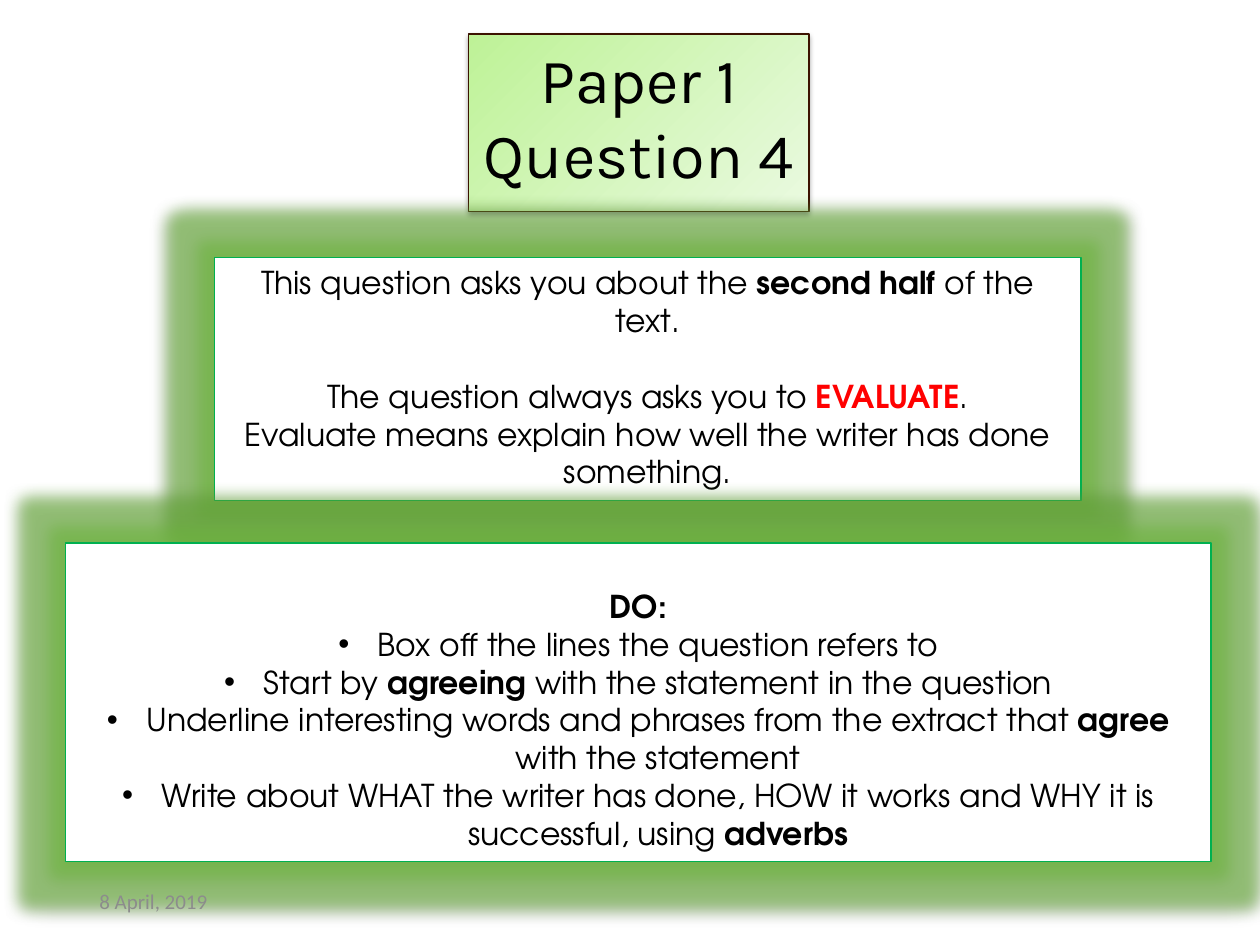
from lxml import etree
from pptx import Presentation
from pptx import util as u
from pptx.dml import color
from pptx.enum import shapes, text
from pptx.oxml import ns

BODY_FONT = "TeX Gyre Adventor"
LINE_HEIGHT = 21.6  # one line of 18 pt body text


def rgb(value):
    return color.RGBColor.from_string(value)


def add_span(para, words, font=BODY_FONT, size=18, hue="000000", bold=False):
    span = para.add_run()
    span.text = words
    span.font.name = font
    span.font.size = u.Pt(size)
    span.font.bold = bold
    span.font.color.rgb = rgb(hue)


def add_para(frame, spans, align=text.PP_ALIGN.CENTER, before=0, bullet=False, **style):
    """Add one paragraph; each span is a string or a (string, format) pair."""
    first = frame.paragraphs[0]
    para = frame.add_paragraph() if first.runs else first
    para.alignment = align
    if before:
        para.space_before = u.Pt(before)
    if bullet:
        props = para._p.get_or_add_pPr()
        props.set("marL", str(u.Pt(22.5)))
        props.set("indent", str(-u.Pt(22.5)))
        etree.SubElement(props, ns.qn("a:buFont")).set("typeface", "Arial")
        etree.SubElement(props, ns.qn("a:buChar")).set("char", "•")
    for span in spans:
        words, extra = (span, {}) if isinstance(span, str) else span
        add_span(para, words, **{**style, **extra})


def add_effect(shape, tag, hue, alpha, **attributes):
    effects = shape.element.spPr.find(ns.qn("a:effectLst"))
    effect = etree.SubElement(effects, ns.qn(tag))
    for name, value in attributes.items():
        effect.set(name, str(value))
    tint = etree.SubElement(effect, ns.qn("a:srgbClr"), val=hue)
    etree.SubElement(tint, ns.qn("a:alpha"), val=str(alpha * 1000))


def add_panel(page, left, top, width, height, line, gradient=None, glow=None, inset=3.6):
    """Add a bordered, shadowed rectangle and return its text frame."""
    panel = page.shapes.add_shape(
        shapes.MSO_SHAPE.RECTANGLE, *map(u.Pt, (left, top, width, height)))
    if gradient:
        panel.fill.gradient()
        panel.fill.gradient_angle = 315
        for stop, hue in zip(panel.fill.gradient_stops, gradient):
            stop.color.rgb = rgb(hue)
    else:
        panel.fill.solid()
        panel.fill.fore_color.rgb = rgb("FFFFFF")
    panel.line.color.rgb = rgb(line)
    panel.line.width = u.Pt(0.75)
    panel.shadow.inherit = False
    if glow:
        add_effect(panel, "a:glow", glow, 60, rad=u.Pt(18))
    add_effect(panel, "a:outerShdw", "000000", 38, blurRad=u.Pt(3.1),
               dist=u.Pt(1.6), dir=5400000, rotWithShape=0)
    frame = panel.text_frame
    frame.word_wrap = True
    frame.vertical_anchor = text.MSO_ANCHOR.TOP
    frame.margin_top = u.Pt(inset)
    return frame


def add_date(page, words):
    box = page.shapes.add_textbox(u.Pt(49.7), u.Pt(500.4), u.Pt(162), u.Pt(28.8))
    box.text_frame.word_wrap = True
    box.text_frame.vertical_anchor = text.MSO_ANCHOR.MIDDLE
    add_para(box.text_frame, [words], align=text.PP_ALIGN.LEFT,
             font="Calibri", size=12, hue="8C8C8C")


def main():
    deck = Presentation()
    deck.slide_width, deck.slide_height = u.Pt(720), u.Pt(540)
    page = deck.slides.add_slide(deck.slide_layouts[6])
    bold = {"bold": True}
    green = {"line": "00B050", "glow": "70B840"}

    # Title
    title = add_panel(page, 267.8, 19.5, 194.5, 101.5, line="3C1301",
                      gradient=("BEF297", "EAFAE0"))
    for words in ("Paper 1", "Question 4"):
        add_para(title, [words], font="Karla", size=36)

    # What the question asks
    task = add_panel(page, 122.4, 147, 495.4, 139, **green)
    add_para(task, ["This question asks you about the ", ("second half ", bold),
                    "of the text."])
    add_para(task, ["The question always asks you to ",
                    ("EVALUATE", {"bold": True, "hue": "FF0000"}), "."],
             before=LINE_HEIGHT)
    add_para(task, ["Evaluate means explain how well the writer has done something."])

    # What to do
    advice = add_panel(page, 37.5, 310.3, 654.5, 182.2, inset=3.6 + LINE_HEIGHT, **green)
    add_para(advice, ["DO:"], bold=True)
    steps = [
        ["Box off the lines the question refers to"],
        ["Start by ", ("agreeing", bold), " with the statement in the question"],
        ["Underline interesting words and phrases from the extract that ",
         ("agree", bold), " with the statement"],
        ["Write about WHAT the writer has done, HOW it works and WHY it is "
         "successful, using ", ("adverbs", bold)],
    ]
    for step in steps:
        add_para(advice, step, bullet=True)

    # Footer date
    add_date(page, "8 April, 2019")

    deck.save("out.pptx")


if __name__ == "__main__":
    main()
